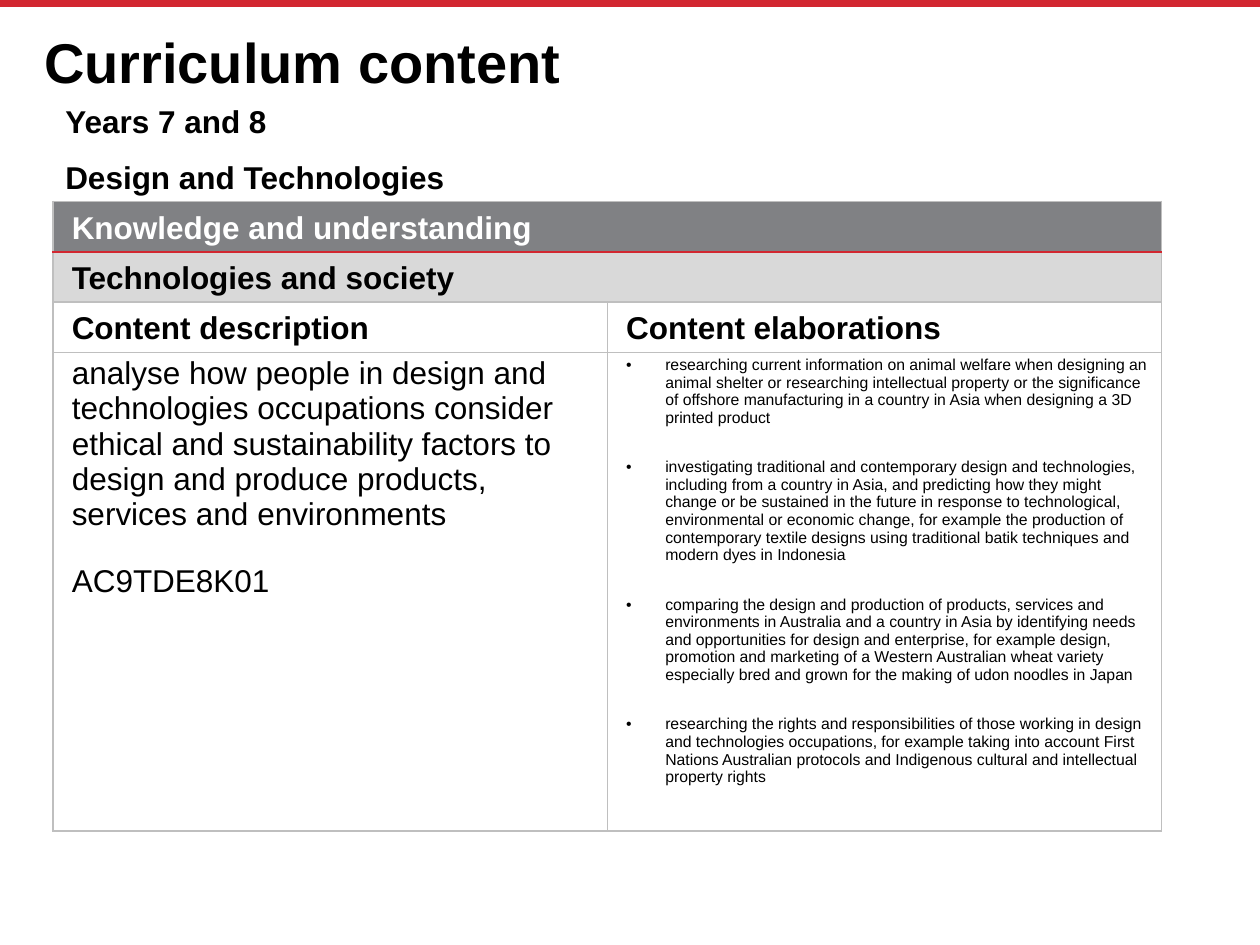
import pptx
import pptx.dml.color
import pptx.enum.shapes
import pptx.enum.text
import pptx.oxml.ns
import pptx.util
from lxml import etree

WIDE, HIGH = 10, 7.5
RED, GREY, BLACK, WHITE = "D22730", "BFBFBF", "000000", "FFFFFF"
MID = pptx.enum.text.MSO_ANCHOR.MIDDLE
TOP = pptx.enum.text.MSO_ANCHOR.TOP
inch, point = pptx.util.Inches, pptx.util.Pt

AIMS = [
    "analyse how people in design and technologies occupations consider ethical and "
    "sustainability factors to design and produce products, services and environments",
    "AC9TDE8K01",
]
IDEAS = [
    "researching current information on animal welfare when designing an animal shelter "
    "or researching intellectual property or the significance of offshore manufacturing "
    "in a country in Asia when designing a 3D printed product",
    "investigating traditional and contemporary design and technologies, including from "
    "a country in Asia, and predicting how they might change or be sustained in the "
    "future in response to technological, environmental or economic change, for example "
    "the production of contemporary textile designs using traditional batik techniques "
    "and modern dyes in Indonesia",
    "comparing the design and production of products, services and environments in "
    "Australia and a country in Asia by identifying needs and opportunities for design "
    "and enterprise, for example design, promotion and marketing of a Western Australian "
    "wheat variety especially bred and grown for the making of udon noodles in Japan",
    "researching the rights and responsibilities of those working in design and "
    "technologies occupations, for example taking into account First Nations Australian "
    "protocols and Indigenous cultural and intellectual property rights",
]


def color(code):
    return pptx.dml.color.RGBColor.from_string(code)


def node(parent, tag, **attrs):
    return etree.SubElement(parent, pptx.oxml.ns.qn(tag), attrs)


def apply(thing, values):
    for name, value in values.items():
        setattr(thing, name, value)


def write(frame, lines, size, bold=True, hue=BLACK, form=None, dent=None, dot=False):
    """Fill a text frame with one paragraph per line."""
    for i, line in enumerate(lines):
        para = frame.paragraphs[0] if i == 0 else frame.add_paragraph()
        props = para._p.get_or_add_pPr()
        if dent:
            props.set("marL", str(inch(dent[0])))
            props.set("indent", str(inch(dent[1])))
        if dot:
            node(props, "a:buFont", typeface="Arial")
            node(props, "a:buChar", char="•")
        apply(para, form or {})
        if i == 0:
            para.space_before = point(0)
        run = para.add_run()
        run.text = line
        apply(run.font, {"name": "Arial", "size": point(size), "bold": bold})
        run.font.color.rgb = color(hue)


def band(slide, y):
    """Red rule across the top of the slide."""
    rule = slide.shapes.add_connector(
        pptx.enum.shapes.MSO_CONNECTOR.STRAIGHT, 0, inch(y), inch(WIDE), inch(y))
    rule.line.color.rgb = color(RED)
    rule.line.width = point(4.2)
    node(rule._element.spPr, "a:effectLst")


def label(slide, box, lines, size, form, frame=None):
    """Text box for the title or the year and subject."""
    area = slide.shapes.add_textbox(*map(inch, box)).text_frame
    apply(area, {"word_wrap": True, **(frame or {})})
    write(area, lines, size, form=form)


def edge(cell, lines):
    """Draw cell borders; lines maps each side to a colour and a width."""
    props = cell._tc.get_or_add_tcPr()
    for side in "LRTB":
        hue, width = lines[side]
        line = node(props, "a:ln" + side, w=str(point(width)))
        node(node(line, "a:solidFill"), "a:srgbClr", val=hue)


def content(slide, box):
    """Curriculum table: two full-width heads, column heads, then the body."""
    x, y, w, h = box
    head = h / 12
    grid = slide.shapes.add_table(4, 2, *map(inch, box)).table
    apply(grid, {"first_row": False, "horz_banding": False})
    for col in grid.columns:
        col.width = inch(w / 2)
    for i, row in enumerate(grid.rows):
        row.height = inch(head if i < 3 else h - 3 * head)

    # Borders and fills
    fills = ["808184", "D9D9D9", WHITE, WHITE]
    thick, thin, rule = (GREY, 1), (GREY, 0.75), (RED, 1.5)
    across = [thick, rule, thick, thin, thick]
    for r in range(4):
        for c in range(2):
            cell = grid.cell(r, c)
            edge(cell, {"L": thin if c else thick, "R": thick if c else thin,
                        "T": across[r], "B": across[r + 1]})
            cell.fill.solid()
            cell.fill.fore_color.rgb = color(fills[r])
            apply(cell, {"margin_left": inch(0.07), "margin_right": inch(0.07),
                         "margin_top": inch(0.03),
                         "margin_bottom": inch(0.03 if r < 3 else 0.16),
                         "vertical_anchor": MID if r < 3 else TOP})
    for r in range(2):
        grid.cell(r, 0).merge(grid.cell(r, 1))

    # Heads
    heads = [(0, 0, "Knowledge and understanding", WHITE),
             (1, 0, "Technologies and society", BLACK),
             (2, 0, "Content description", BLACK),
             (2, 1, "Content elaborations", BLACK)]
    for r, c, text, hue in heads:
        write(grid.cell(r, c).text_frame, [text], 18, hue=hue,
              form={"line_spacing": 1.1}, dent=(0.08, 0))

    # Body
    after = {"space_after": point(18)}
    write(grid.cell(3, 0).text_frame, AIMS, 18, False, form=after, dent=(0.08, 0))
    write(grid.cell(3, 1).text_frame, IDEAS, 9, False, form=after,
          dent=(0.39, -0.31), dot=True)


def main():
    deck = pptx.Presentation()
    apply(deck, {"slide_width": inch(WIDE), "slide_height": inch(HIGH)})
    slide = deck.slides.add_slide(deck.slide_layouts[6])
    left, wide = 0.042 * WIDE, 0.88 * WIDE
    band(slide, 0.004 * HIGH)
    bare = {"margin_" + side: 0 for side in ("left", "right", "top", "bottom")}
    label(slide, (0.035 * WIDE, 0.037 * HIGH, 0.93 * WIDE, 0.064 * HIGH),
          ["Curriculum content"], 32, {"line_spacing": 0.9},
          {**bare, "vertical_anchor": MID})
    content(slide, (left, 0.213 * HIGH, wide, 0.64 * HIGH))
    label(slide, (left, 0.101 * HIGH, wide, 0.115 * HIGH),
          ["Years 7 and 8", "Design and Technologies"], 18,
          {"space_before": point(10.8)})
    deck.save("out.pptx")


if __name__ == "__main__":
    main()
